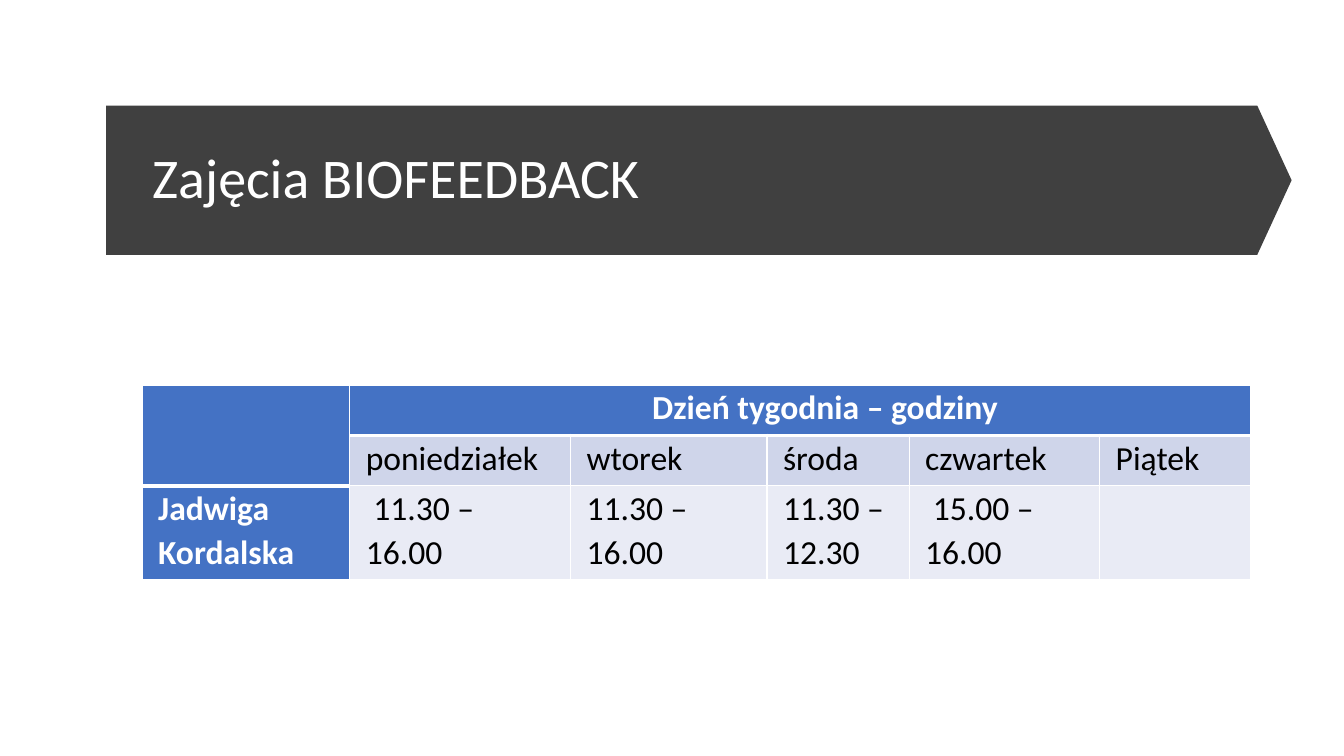
from lxml.etree import SubElement as Sub
from pptx import Presentation
from pptx.dml.color import RGBColor
from pptx.enum.shapes import MSO_SHAPE as Shape
from pptx.enum.text import MSO_ANCHOR as Anchor, PP_ALIGN as Align
from pptx.oxml.ns import qn
from pptx.util import Pt

WHITE = RGBColor(0xFF, 0xFF, 0xFF)
BLACK = RGBColor(0, 0, 0)
DARK = RGBColor(0x40, 0x40, 0x40)
BLUE = RGBColor(0x44, 0x72, 0xC4)
BAND = RGBColor(0xCF, 0xD5, 0xEA)
PALE = RGBColor(0xE9, 0xEB, 0xF5)

WIDTHS = [148.3, 157.7, 140.4, 101.5, 136.1, 108]
HEIGHTS = [36, 36, 67]
ROWS = [
    ["", "Dzień tygodnia – godziny", "", "", "", ""],
    ["", "poniedziałek", "wtorek", "środa", "czwartek", "Piątek"],
    ["Jadwiga Kordalska", " 11.30 – 16.00", "11.30 – 16.00",
     "11.30 – 12.30 ", " 15.00 – 16.00", ""],
]
FILLS = [BLUE, BAND, PALE]


class Page:
    font = "Calibri"
    size = 24

    def __init__(self, deck):
        self.slide = deck.slides.add_slide(deck.slide_layouts[5])

    def text(self, para, words, size, color, bold=False):
        run = para.add_run()
        run.text = words
        run.font.name = self.font
        run.font.size = Pt(size)
        run.font.bold = bold
        run.font.color.rgb = color

    def arrow(self, left, top, width, height, tip):
        x = left + (width - height) / 2
        y = top + (height - width) / 2
        shape = self.slide.shapes.add_shape(
            Shape.DOWN_ARROW, Pt(x), Pt(y), Pt(height), Pt(width))
        shape.rotation = 270
        shape.adjustments[0] = 1
        shape.adjustments[1] = tip
        shape.shadow.inherit = False
        shape.fill.solid()
        shape.fill.fore_color.rgb = DARK
        shape.line.fill.background()
        tree = self.slide.shapes.title.element.getparent()
        tree.insert(2, shape.element)

    def title(self, words, left, top, width, height):
        box = self.slide.shapes.title
        box.left, box.top = Pt(left), Pt(top)
        box.width, box.height = Pt(width), Pt(height)
        frame = box.text_frame
        frame.vertical_anchor = Anchor.MIDDLE
        para = frame.paragraphs[0]
        para.alignment = Align.LEFT
        para.line_spacing = 0.9
        self.text(para, words, 40, WHITE)

    def edge(self, cell, side, width):
        line = Sub(cell._tc.get_or_add_tcPr(), qn("a:ln" + side), w=str(Pt(width)))
        fill = Sub(line, qn("a:solidFill"))
        Sub(fill, qn("a:srgbClr"), val=str(WHITE))

    def cell(self, cell, words, fill, first, thick):
        self.edge(cell, "L", 1)
        self.edge(cell, "R", 1)
        if first:
            self.edge(cell, "T", 1)
        self.edge(cell, "B", 3 if thick else 1)
        cell.fill.solid()
        cell.fill.fore_color.rgb = fill
        cell.margin_left = cell.margin_right = Pt(11.5)
        cell.margin_top = cell.margin_bottom = 0
        if not words:
            return
        para = cell.text_frame.paragraphs[0]
        para.line_spacing = 1.07
        para.space_after = Pt(8)
        if first:
            para.alignment = Align.CENTER
            para._p.get_or_add_pPr().set("marL", str(Pt(35.4)))
        head = fill == BLUE
        self.text(para, words, self.size, WHITE if head else BLACK, head)

    def table(self, left, top):
        grid = self.slide.shapes.add_table(
            len(ROWS), len(WIDTHS), Pt(left), Pt(top),
            Pt(sum(WIDTHS)), Pt(sum(HEIGHTS))).table
        grid.first_row = grid.horz_banding = False
        for col, width in zip(grid.columns, WIDTHS):
            col.width = Pt(width)
        for row, height in zip(grid.rows, HEIGHTS):
            row.height = Pt(height)
        grid.cell(0, 0).merge(grid.cell(1, 0))
        grid.cell(0, 1).merge(grid.cell(0, len(WIDTHS) - 1))
        for r, row in enumerate(ROWS):
            for c, words in enumerate(row):
                fill = BLUE if c == 0 else FILLS[r]
                thick = r == 0 or (r == 1 and c == 0)
                self.cell(grid.cell(r, c), words, fill, r == 0, thick)


def main():
    deck = Presentation()
    deck.slide_width, deck.slide_height = Pt(960), Pt(540)
    page = Page(deck)
    page.arrow(75.9, 75.4, 846.7, 106.6, 0.23)
    page.title("Zajęcia BIOFEEDBACK", 101.5, 95, 789, 67.7)
    page.table(101.5, 275)
    deck.save("out.pptx")


if __name__ == "__main__":
    main()
